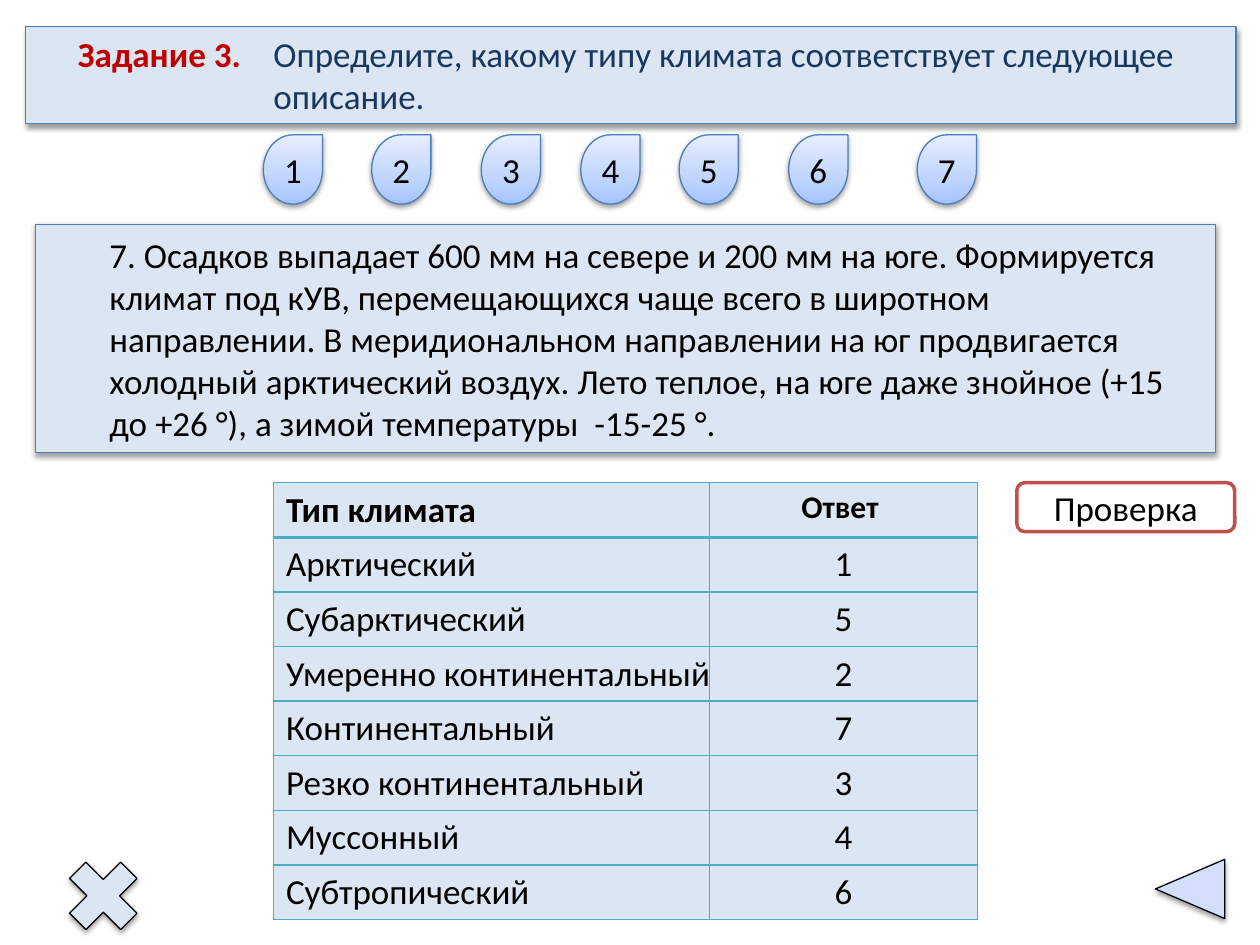
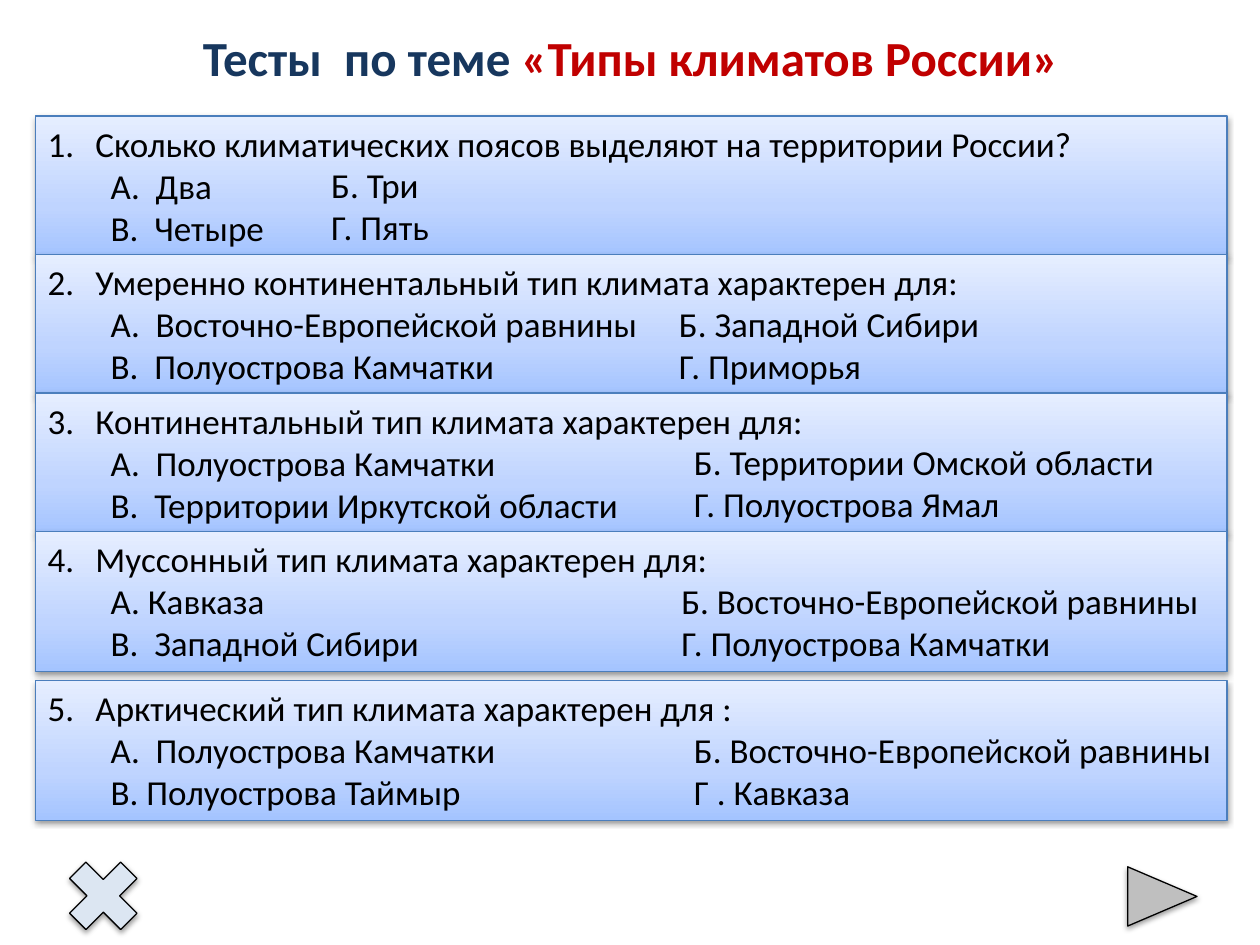
from lxml import etree
from pptx import Presentation
from pptx import util as u
from pptx.dml.color import RGBColor
from pptx.enum import shapes, text
from pptx.oxml import ns

# Shared look
PALE = RGBColor(0xDC, 0xE6, 0xF2)
BLUE = RGBColor(0x4B, 0x7E, 0xBC)
NAVY = RGBColor(0x17, 0x37, 0x5E)
CRIMSON = RGBColor(0xC0, 0x00, 0x00)
BRICK = RGBColor(0xC0, 0x50, 0x4D)
TEAL = RGBColor(0x4B, 0xAC, 0xC6)
GREY = RGBColor(0xBF, 0xBF, 0xBF)
WHITE = RGBColor(0xFF, 0xFF, 0xFF)
BLACK = RGBColor(0x00, 0x00, 0x00)
SKY = ([(0, "A4C4FF"), (35, "BFD4FF"), (100, "E6EEFF")], 270)
LILAC = ([(53, "D4DEFF"), (83, "D4DEFF"), (100, "B9CDE5"), (100, "96AB94")], 45)
PLAIN = dict(name="Calibri", size=u.Pt(20), bold=False, color=BLACK)
SHAPE = shapes.MSO_SHAPE
TOP, MIDDLE = text.MSO_ANCHOR.TOP, text.MSO_ANCHOR.MIDDLE
LEFT, CENTER = text.PP_ALIGN.LEFT, text.PP_ALIGN.CENTER

# Content of the task slide
TASK_LABEL = "Задание 3."
TASK = "Определите, какому типу климата соответствует следующее описание."
DROP_LEFTS = [2.09, 2.95, 3.82, 4.61, 5.39, 6.26, 7.28]
DESCRIPTION = (
    "7. Осадков выпадает 600 мм на севере и 200 мм на юге. Формируется климат "
    "под кУВ, перемещающихся чаще всего в широтном направлении. "
    "В меридиональном направлении на юг продвигается холодный арктический "
    "воздух. Лето теплое, на юге даже знойное (+15 до +26 °), а зимой "
    "температуры  -15-25 °."
)
CHECK = "Проверка"
ANSWER_HEAD = "Ответ "
CLIMATES = [
    ("Тип климата", ANSWER_HEAD),
    ("Арктический", ""),
    ("Субарктический", ""),
    ("Умеренно континентальный", ""),
    ("Континентальный", ""),
    ("Резко континентальный", ""),
    ("Муссонный", ""),
    ("Субтропический", ""),
]
ANSWERS = [(words,) for words in (ANSWER_HEAD, *"1527346")]

# Content of the test slide: top, left of second column, question, both columns
TEST_TITLE = [("Тесты  по теме ", NAVY), ("«Типы климатов России»", CRIMSON)]
QUESTIONS = [
    (0.92, 2.63, "Сколько климатических поясов выделяют на территории России?",
     ["А.  Два", "В.  Четыре"],
     ["Б. Три", "Г. Пять"]),
    (2.02, 5.39, "Умеренно континентальный тип климата характерен для:",
     ["А.  Восточно-Европейской равнины", "В.  Полуострова Камчатки"],
     ["Б. Западной Сибири", "Г. Приморья"]),
    (3.12, 5.51, "Континентальный тип климата характерен для:",
     ["А.  Полуострова Камчатки", "В.  Территории Иркутской области"],
     ["Б. Территории Омской области", "Г. Полуострова Ямал"]),
    (4.22, 5.41, "Муссонный тип климата характерен для:",
     ["А. Кавказа", "В.  Западной Сибири"],
     ["Б. Восточно-Европейской равнины", "Г. Полуострова Камчатки"]),
    (5.4, 5.51, "Арктический тип климата характерен для :",
     ["А.  Полуострова Камчатки", "В. Полуострова Таймыр"],
     ["Б. Восточно-Европейской равнины", "Г . Кавказа"]),
]


def inches(*lengths):
    return [u.Inches(length) for length in lengths]


def add_xml(parent, tag, **attributes):
    """Append a DrawingML element and return it."""
    values = {key: str(value) for key, value in attributes.items()}
    return etree.SubElement(parent, ns.qn("a:" + tag), values)


def paint(shape, fill, line, width=0.75, shadow=True):
    """Give a shape its fill, outline and shadow."""
    if isinstance(fill, RGBColor):
        shape.fill.solid()
        shape.fill.fore_color.rgb = fill
    else:
        stops, angle = fill
        shape.fill.gradient()
        gradient = shape.fill._fill._gradFill
        for child in list(gradient):
            gradient.remove(child)
        stop_list = add_xml(gradient, "gsLst")
        for position, color in stops:
            stop = add_xml(stop_list, "gs", pos=position * 1000)
            add_xml(stop, "srgbClr", val=color)
        add_xml(gradient, "lin", ang=angle * 60000, scaled=0)
    shape.line.color.rgb = line
    shape.line.width = u.Pt(width)
    shape.shadow.inherit = False
    if shadow:
        effects = shape._element.spPr.find(ns.qn("a:effectLst"))
        outer = add_xml(effects, "outerShdw", blurRad=u.Pt(3.1),
                        dist=u.Pt(1.6), dir=90 * 60000, rotWithShape=0)
        color = add_xml(outer, "srgbClr", val=BLACK)
        add_xml(color, "alpha", val=38000)


def add_shape(page, kind, at, fill, line, **look):
    shape = page.shapes.add_shape(kind, *inches(*at))
    paint(shape, fill, line, **look)
    return shape


def set_frame(box, anchor):
    frame = box.text_frame
    formats = dict(word_wrap=True, auto_size=text.MSO_AUTO_SIZE.NONE,
                   vertical_anchor=anchor)
    for name, value in formats.items():
        setattr(frame, name, value)
    return frame


def write(para, spans, align=LEFT, **changes):
    """Fill a paragraph with (words, colour) spans in one format."""
    para.alignment = align
    for words, color in spans:
        span = para.add_run()
        span.text = words
        for name, value in {**PLAIN, **changes, "color": color}.items():
            if name == "color":
                span.font.color.rgb = value
            else:
                setattr(span.font, name, value)


def label(box, words, align=CENTER, anchor=MIDDLE, color=BLACK, **changes):
    para = set_frame(box, anchor).paragraphs[0]
    write(para, [(words, color)], align, **changes)
    return para


def indent(para, left, first):
    properties = para._p.get_or_add_pPr()
    properties.set("marL", str(u.Inches(left)))
    properties.set("indent", str(u.Inches(first)))
    return properties


def place_title(page, at):
    title = page.shapes.title
    title.left, title.top, title.width, title.height = inches(*at)
    return title


def add_page(deck, arrow_at, arrow_fill, rotation):
    """Start a page with the exit cross and the navigation arrow."""
    page = deck.slides.add_slide(deck.slide_layouts[5])
    add_shape(page, SHAPE.MATH_MULTIPLY, (0.43, 6.72, 0.78, 0.78), PALE, BLACK)
    arrow = add_shape(page, SHAPE.PENTAGON, (*arrow_at, 0.55, 0.47),
                      arrow_fill, BLACK)
    arrow.adjustments[0] = 1.17
    arrow.rotation = rotation
    return page


def border(cell, bottom):
    """Draw the four edges of a table cell, ahead of its fill."""
    properties = cell._tc.get_or_add_tcPr()
    for index, side in enumerate("LRTB"):
        width = bottom if side == "B" else 1
        edge = add_xml(properties, "ln" + side, w=u.Pt(width))
        add_xml(add_xml(edge, "solidFill"), "srgbClr", val=TEAL)
        properties.insert(index, edge)


def add_table(page, left, widths, rows):
    table = page.shapes.add_table(len(rows), len(widths),
                                  *inches(left, 3.83, sum(widths), 3.47)).table
    for column, width in zip(table.columns, inches(*widths)):
        column.width = width
    for row, entries in enumerate(rows):
        header = row == 0
        for column, words in enumerate(entries):
            cell = table.cell(row, column)
            cell.fill.solid()
            cell.fill.fore_color.rgb = PALE
            cell.margin_bottom = u.Inches(0.04)
            border(cell, 2 if header else 1)
            is_climate = rows is CLIMATES and column == 0
            if is_climate:
                cell.margin_right = 0
            if words:
                write(cell.text_frame.paragraphs[0], [(words, BLACK)],
                      LEFT if is_climate else CENTER, bold=header,
                      size=u.Pt(18 if words == ANSWER_HEAD else 20))


def add_task_page(deck):
    page = add_page(deck, (9.17, 6.82), LILAC, 180)

    # Task band
    title = place_title(page, (0.2, 0.21, 9.61, 0.77))
    paint(title, PALE, BLUE)
    label(title, TASK, LEFT, TOP, NAVY)
    title.text_frame.margin_left = u.Inches(1.97)
    task_label = page.shapes.add_textbox(*inches(0.52, 0.21, 1.6, 0.45))
    label(task_label, TASK_LABEL, LEFT, TOP, CRIMSON, bold=True)

    # Climate types, with the answers laid over the empty column
    add_table(page, 2.17, [3.57, 2.02], CLIMATES)
    add_table(page, 5.63, [2.13], ANSWERS)

    # Numbered drops
    for number, left in enumerate(DROP_LEFTS, 1):
        drop = add_shape(page, SHAPE.TEAR, (left, 1.07, 0.47, 0.55), SKY, BLUE)
        label(drop, str(number))
        drop.text_frame.margin_left = drop.text_frame.margin_right = 0

    # Climate description and check button
    box = add_shape(page, SHAPE.RECTANGLE, (0.28, 1.78, 9.37, 1.81), PALE, BLUE)
    indent(label(box, DESCRIPTION, LEFT), 0.49, 0)
    button = add_shape(page, SHAPE.ROUNDED_RECTANGLE, (8.07, 3.83, 1.73, 0.39),
                       WHITE, BRICK, width=2, shadow=False)
    label(button, CHECK)


def add_test_page(deck):
    page = add_page(deck, (8.95, 6.88), GREY, 0)
    title = place_title(page, (1.23, 0.17, 7.55, 0.57))
    write(set_frame(title, TOP).paragraphs[0], TEST_TITLE, CENTER,
          size=u.Pt(28), bold=True)

    # Question boxes: a numbered line, then options in two columns
    for number, (top, second, question, first_options,
                 second_options) in enumerate(QUESTIONS, 1):
        box = add_shape(page, SHAPE.RECTANGLE, (0.28, top, 9.46, 1.11), SKY, BLUE)
        frame = set_frame(box, TOP)
        para = frame.paragraphs[0]
        add_xml(indent(para, 0.38, -0.38), "buAutoNum",
                type="arabicPeriod", startAt=number)
        write(para, [(question, BLACK)])
        for option in first_options:
            para = frame.add_paragraph()
            indent(para, 0.88, -0.38)
            write(para, [(option, BLACK)])

        column = page.shapes.add_textbox(
            *inches(second - 0.1, top + 0.33, 9.84 - second, 0.77))
        frame = set_frame(column, TOP)
        for index, option in enumerate(second_options):
            para = frame.add_paragraph() if index else frame.paragraphs[0]
            write(para, [(option, BLACK)])


def main():
    deck = Presentation()
    deck.slide_width, deck.slide_height = inches(10, 7.5)
    add_task_page(deck)
    add_test_page(deck)
    deck.save("out.pptx")


if __name__ == "__main__":
    main()
